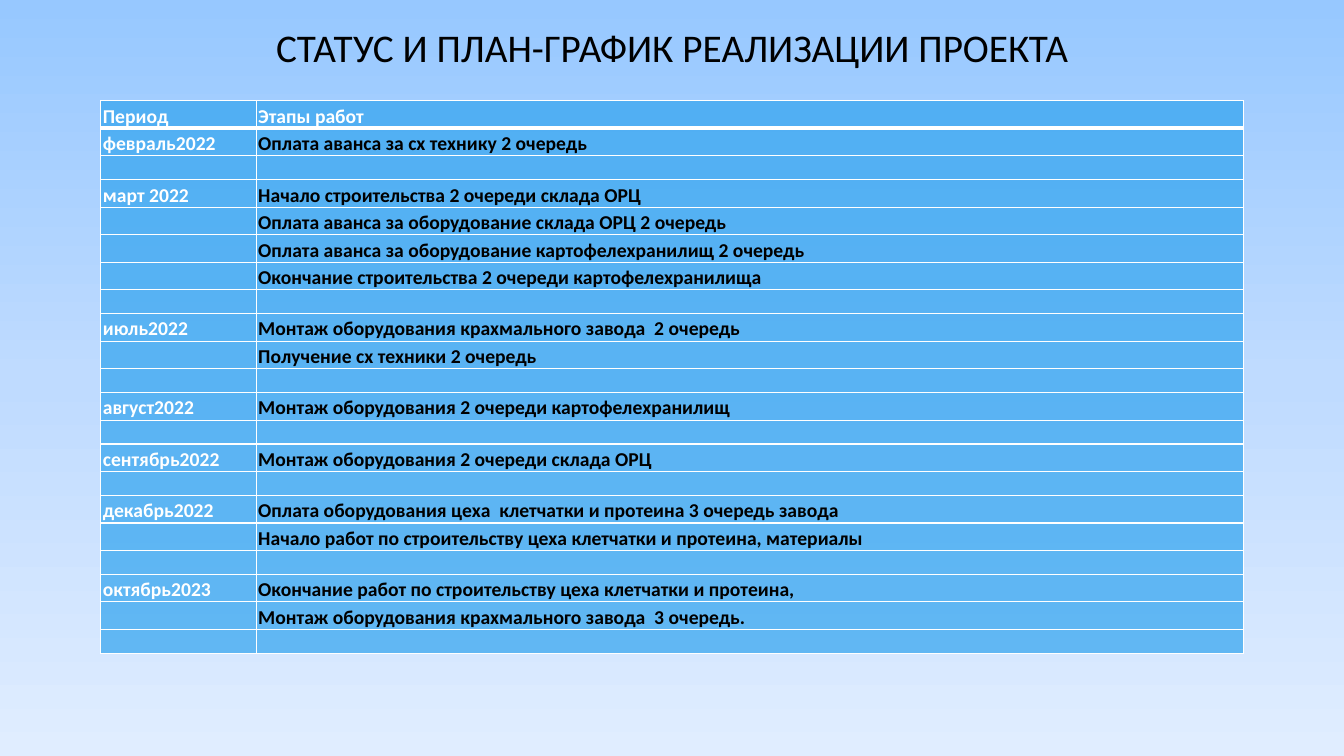
from copy import deepcopy

from lxml import etree
from pptx import Presentation
from pptx.dml.color import RGBColor
from pptx.enum import text
from pptx.oxml import ns
from pptx.util import Pt

COLORS = {"sky": "97C8FF", "mid": "BFDBFF", "pale": "E0EDFF",
          "cell": "2FA3EE", "white": "FFFFFF", "black": "000000"}
FONT = "Calibri"
TITLE = "СТАТУС И ПЛАН-ГРАФИК РЕАЛИЗАЦИИ ПРОЕКТА"
SCHEDULE = [
    ("Период", ["Этапы работ"]),
    ("февраль2022", ["Оплата аванса за сх технику 2 очередь", ""]),
    ("март 2022", ["Начало строительства 2 очереди склада ОРЦ",
                   "Оплата аванса за оборудование склада ОРЦ 2 очередь",
                   "Оплата аванса за оборудование картофелехранилищ 2 очередь",
                   "Окончание строительства 2 очереди картофелехранилища", ""]),
    ("июль2022", ["Монтаж оборудования крахмального завода  2 очередь",
                  "Получение сх техники 2 очередь", ""]),
    ("август2022", ["Монтаж оборудования 2 очереди картофелехранилищ", ""]),
    ("сентябрь2022", ["Монтаж оборудования 2 очереди склада ОРЦ", ""]),
    ("декабрь2022", ["Оплата оборудования цеха  клетчатки и протеина 3 очередь завода",
                     "Начало работ по строительству цеха клетчатки и протеина, материалы", ""]),
    ("октябрь2023", ["Окончание работ по строительству цеха клетчатки и протеина,",
                     "Монтаж оборудования крахмального завода  3 очередь.", ""]),
]


def set_font(paragraph, size, color, bold=False):
    """Format all text of a paragraph."""
    font = paragraph.font
    font.name, font.size, font.bold = FONT, Pt(size), bold
    font.color.rgb = RGBColor.from_string(COLORS[color])


def paint_background(slide):
    """Fill the slide with a vertical three-stop gradient."""
    fill = slide.background.fill
    fill.gradient()
    fill.gradient_angle = 270
    first = fill.gradient_stops[0]._gs
    first.addnext(deepcopy(first))
    for stop, position, color in zip(fill.gradient_stops, (0, 0.5, 1), ("sky", "mid", "pale")):
        stop.position = position
        stop.color.rgb = RGBColor.from_string(COLORS[color])


def add_title(slide, left, top, width, height):
    """Place the title placeholder in its box."""
    title = slide.shapes.title
    title.left, title.top, title.width, title.height = map(Pt, (left, top, width, height))
    frame = title.text_frame
    frame.text = TITLE
    frame.vertical_anchor = text.MSO_ANCHOR.MIDDLE
    paragraph = frame.paragraphs[0]
    paragraph.alignment = text.PP_ALIGN.CENTER
    paragraph.line_spacing = 0.9
    set_font(paragraph, 28, "black")


def style_cell(cell, top_width, bottom_width):
    """Give a cell its translucent fill and white borders."""
    cell.fill.solid()
    cell.fill.fore_color.rgb = RGBColor.from_string(COLORS["cell"])
    properties = cell._tc.tcPr
    color = properties.find(".//" + ns.qn("a:srgbClr"))
    etree.SubElement(color, ns.qn("a:alpha"), val="70000")
    borders = (("L", 1), ("R", 1), ("T", top_width), ("B", bottom_width))
    for index, (side, width) in enumerate(borders):
        line = etree.Element(ns.qn("a:ln" + side), w=str(Pt(width)))
        solid = etree.SubElement(line, ns.qn("a:solidFill"))
        etree.SubElement(solid, ns.qn("a:srgbClr"), val=COLORS["white"])
        properties.insert(index, line)


def fill_cell(cell, words, color):
    """Write one cell, keeping blank cells at the same text size."""
    cell.margin_left = cell.margin_right = Pt(1.5)
    cell.margin_top = cell.margin_bottom = 0
    cell.vertical_anchor = text.MSO_ANCHOR.BOTTOM
    paragraph = cell.text_frame.paragraphs[0]
    if words:
        paragraph.text = words
        paragraph.line_spacing = 1.15
    set_font(paragraph, 14, color, bold=True)
    if not words:
        etree.SubElement(paragraph._p, ns.qn("a:endParaRPr"), sz="1400")


def add_schedule(slide, left, top, width):
    """Build the table of periods and work stages."""
    rows = [(period if index == 0 else "", stage)
            for period, stages in SCHEDULE for index, stage in enumerate(stages)]
    heights = [19.65 if stage else 17.1 for _, stage in rows]
    table = slide.shapes.add_table(len(rows), 2, Pt(left), Pt(top), Pt(width),
                                   Pt(sum(heights))).table
    table.horz_banding = False
    table_properties = table._tbl.tblPr
    table_properties.remove(table_properties.find(ns.qn("a:tableStyleId")))
    period_width = 111
    table.columns[0].width = Pt(period_width)
    table.columns[1].width = Pt(width - period_width)
    for row, values in enumerate(rows):
        table.rows[row].height = Pt(heights[row])
        for column, words in enumerate(values):
            cell = table.cell(row, column)
            fill_cell(cell, words, "white" if row == 0 or column == 0 else "black")
            style_cell(cell, 3 if row == 1 else 1, 3 if row == 0 else 1)


def main():
    """Create the presentation."""
    presentation = Presentation()
    presentation.slide_width, presentation.slide_height = Pt(960), Pt(540)
    slide = presentation.slides.add_slide(presentation.slide_layouts[5])
    paint_background(slide)
    add_title(slide, 72, 14.4, 816, 42.5)
    add_schedule(slide, 72, 72, 816)
    presentation.save("out.pptx")


if __name__ == "__main__":
    main()
